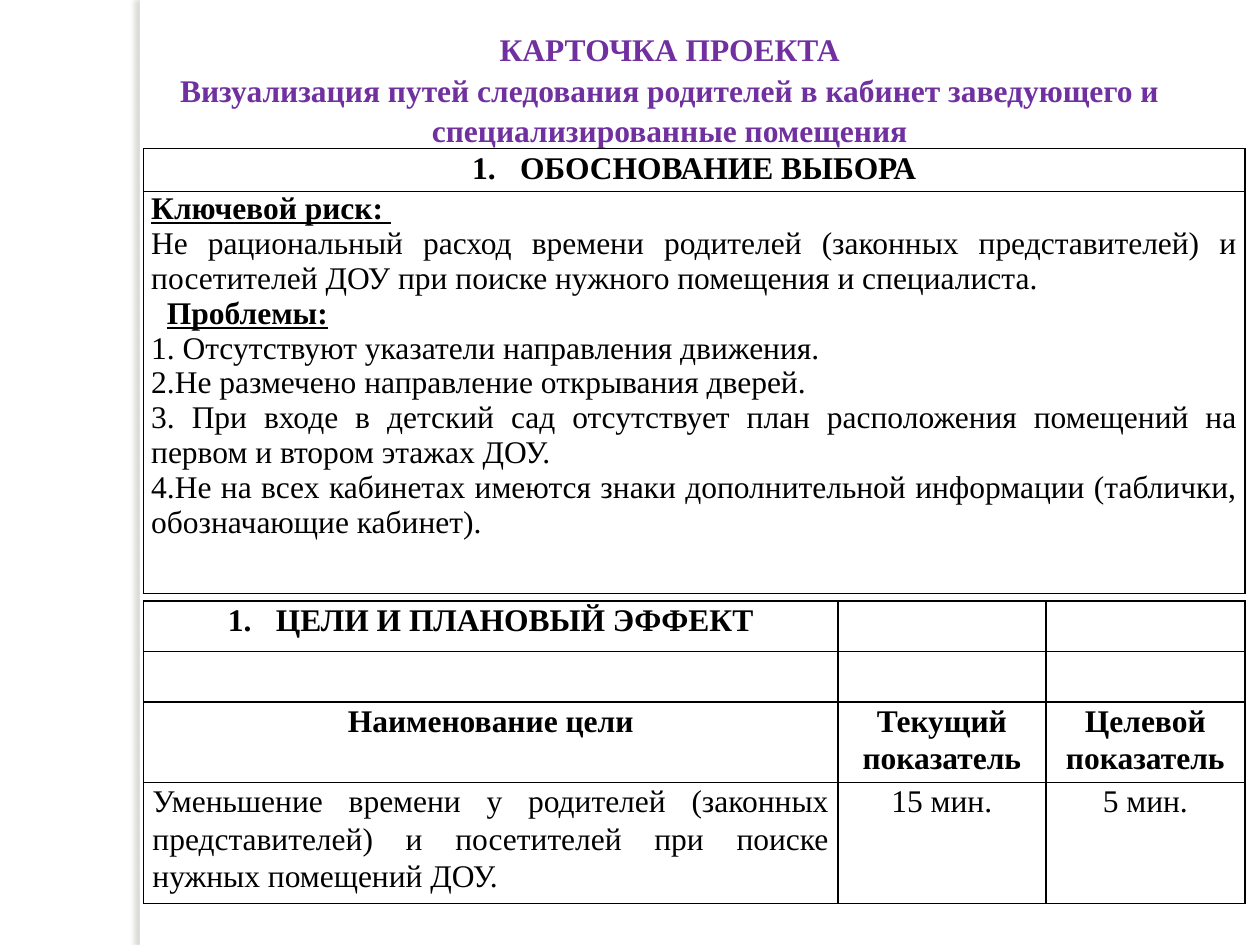
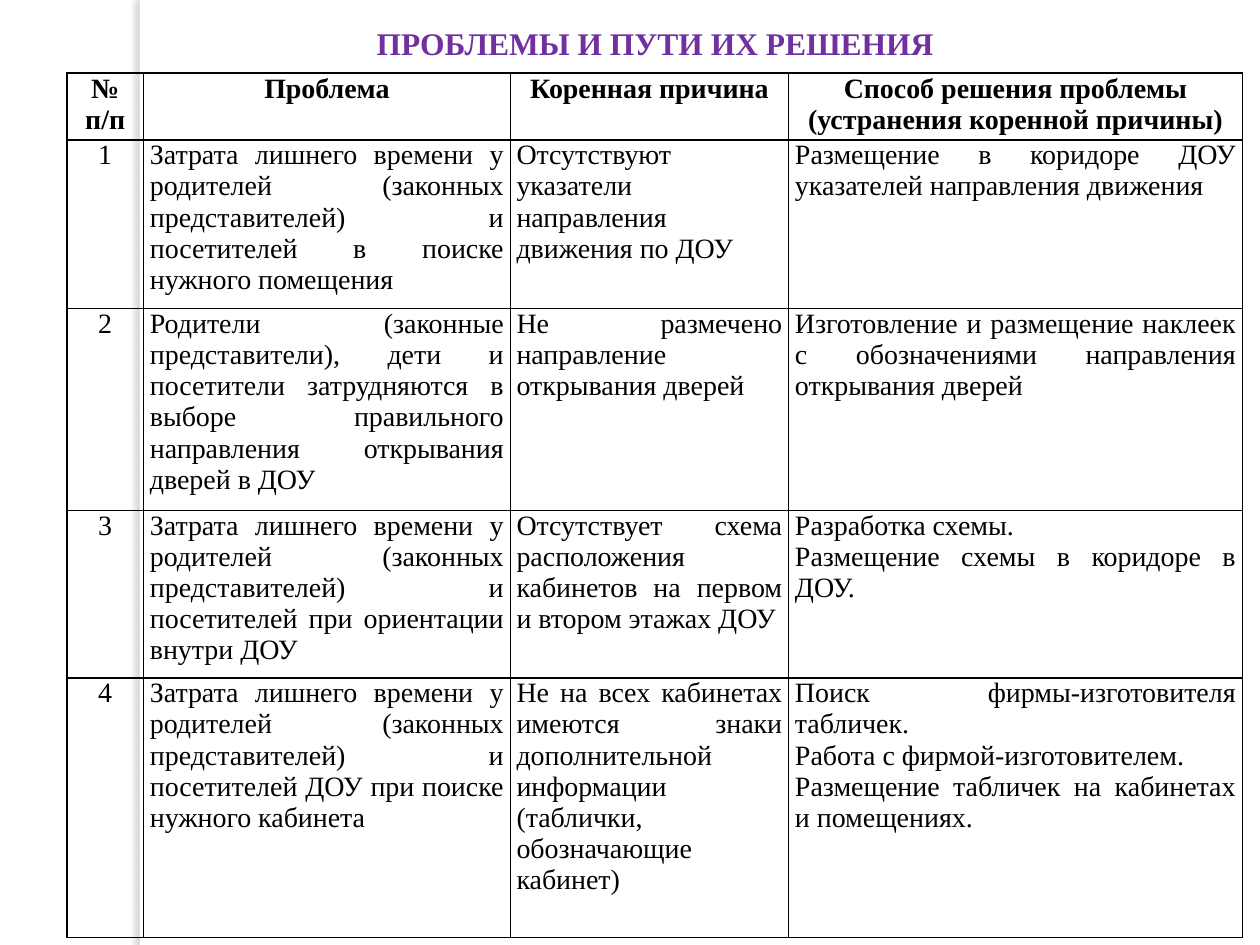
from dataclasses import dataclass
from itertools import accumulate

from lxml.etree import SubElement
from pptx import Presentation
from pptx.dml.color import RGBColor
from pptx.enum.shapes import MSO_SHAPE
from pptx.enum.text import MSO_ANCHOR, MSO_AUTO_SIZE, PP_ALIGN
from pptx.oxml import parse_xml
from pptx.oxml.ns import nsdecls, qn
from pptx.util import Inches, Pt

SLIDE_WIDTH, SLIDE_HEIGHT = Inches(10), Inches(7.5)
GRID_UNIT = SLIDE_WIDTH // 100  # the slide is 100 columns by 75 rows
FONT = "Times New Roman"
BLACK, WHITE, PURPLE, SHADOW = "000000", "FFFFFF", "7030A0", "736F63"
CENTER, JUSTIFY = PP_ALIGN.CENTER, PP_ALIGN.JUSTIFY
LOOSE = 1.07


@dataclass(frozen=True)
class Box:
    column: float
    row: float
    columns: float
    rows: float


@dataclass(frozen=True)
class Line:
    """One paragraph with its format."""
    text: str
    alignment: PP_ALIGN = JUSTIFY
    bold: bool = False
    underline: bool = False
    numbered: bool = False
    spacing: float = 1.0
    indent: float = 0


@dataclass(frozen=True)
class Grid:
    """A table: its corner, column widths, row heights and cells of lines."""
    column: float
    row: float
    widths: list[float]
    heights: list[float]
    cells: list[list[list[Line]]]
    size: int
    inset: float


def units(count: float) -> int:
    return round(count * GRID_UNIT)


def color(value: str) -> RGBColor:
    return RGBColor.from_string(value)


def place(box: Box) -> tuple[int, int, int, int]:
    return units(box.column), units(box.row), units(box.columns), units(box.rows)


def set_attributes(target, values: dict) -> None:
    for name, value in values.items():
        setattr(target, name, value)


def write_lines(frame, lines: list[Line], size: int, text_color: str) -> None:
    for index, line in enumerate(lines):
        paragraph = frame.add_paragraph() if index else frame.paragraphs[0]
        set_attributes(paragraph, {"alignment": line.alignment, "line_spacing": line.spacing})
        run = paragraph.add_run()
        run.text = line.text
        set_attributes(run.font, {"name": FONT, "size": Pt(size), "bold": line.bold,
                                  "underline": line.underline})
        run.font.color.rgb = color(text_color)
        properties = paragraph._p.get_or_add_pPr()
        if line.numbered:
            properties.set("marL", str(units(3.8)))
            properties.set("indent", str(-units(3.8)))
            SubElement(properties, qn("a:buFont"), typeface=FONT)
            SubElement(properties, qn("a:buAutoNum"), type="arabicPeriod")
        elif line.indent:
            properties.set("marL", str(units(line.indent)))


def add_side_band(slide) -> None:
    left, top, width, height = place(Box(11.1, 0, 0.8, 75))
    band = slide.shapes.add_shape(MSO_SHAPE.RECTANGLE, left, top, width, height)
    band.fill.solid()
    band.fill.fore_color.rgb = color(WHITE)
    band.line.fill.background()
    band._element.spPr.append(parse_xml(
        f'<a:effectLst {nsdecls("a")}>'
        f'<a:outerShdw blurRad="{Pt(3)}" dist="{Pt(3)}" dir="{180 * 60000}" algn="tl" rotWithShape="0">'
        f'<a:srgbClr val="{SHADOW}"><a:alpha val="25000"/></a:srgbClr>'
        '</a:outerShdw></a:effectLst>'))


def write_title(slide, box: Box, lines: list[str], top_inset: float) -> None:
    title = slide.shapes.title
    left, top, width, height = place(box)
    set_attributes(title, {"left": left, "top": top, "width": width, "height": height})
    set_attributes(title.text_frame, {
        "word_wrap": True, "auto_size": MSO_AUTO_SIZE.NONE,
        "vertical_anchor": MSO_ANCHOR.TOP, "margin_top": units(top_inset)})
    write_lines(title.text_frame,
                [Line(text, CENTER, bold=True, spacing=LOOSE) for text in lines], 18, PURPLE)


def add_borders(cell) -> None:
    properties = cell._tc.get_or_add_tcPr()
    for index, side in enumerate(("lnL", "lnR", "lnT", "lnB")):
        properties.insert(index, parse_xml(
            f'<a:{side} {nsdecls("a")} w="{Pt(1)}"><a:solidFill>'
            f'<a:srgbClr val="{BLACK}"/></a:solidFill></a:{side}>'))


def add_grid(slide, grid: Grid) -> None:
    box = Box(grid.column, grid.row, sum(grid.widths), sum(grid.heights))
    table = slide.shapes.add_table(len(grid.heights), len(grid.widths), *place(box)).table
    set_attributes(table, {"first_row": False, "horz_banding": False})
    for tracks, lengths, name in ((table.columns, grid.widths, "width"),
                                  (table.rows, grid.heights, "height")):
        edges = [units(edge) for edge in accumulate(lengths, initial=0)]
        for track, start, end in zip(tracks, edges, edges[1:]):
            setattr(track, name, end - start)
    for row, contents in zip(table.rows, grid.cells):
        for cell, lines in zip(row.cells, contents):
            set_attributes(cell, {"margin_left": units(grid.inset), "margin_right": units(grid.inset),
                                  "margin_top": 0, "margin_bottom": 0})
            cell.fill.background()
            add_borders(cell)
            write_lines(cell.text_frame, lines, grid.size, BLACK)


def heading(text: str, spacing: float = 1.0, numbered: bool = False) -> list[Line]:
    return [Line(text, CENTER, bold=True, spacing=spacing, numbered=numbered)]


def solution_row(number: int, problem: str, cause: str, *solutions: str) -> list[list[Line]]:
    return [[Line(str(number), CENTER)], [Line(problem)], [Line(cause)],
            [Line(solution) for solution in solutions]]


RATIONALE = Grid(11.4, 11.8, [87.4], [3.4, 31.9], [
    [heading("ОБОСНОВАНИЕ ВЫБОРА", LOOSE, numbered=True)],
    [[Line("Ключевой риск: ", bold=True, underline=True),
      Line("Не рациональный расход времени родителей (законных представителей) и посетителей ДОУ "
           "при поиске нужного помещения и специалиста."),
      Line("Проблемы:", bold=True, underline=True, indent=1.25),
      Line("1. Отсутствуют указатели направления движения."),
      Line("2.Не размечено направление открывания дверей."),
      Line("3. При входе в детский сад отсутствует план расположения помещений на первом и втором "
           "этажах ДОУ."),
      Line("4.Не на всех кабинетах имеются знаки дополнительной информации "
           "(таблички, обозначающие кабинет).")]],
], size=18, inset=0.6)

GOALS = Grid(11.4, 47.7, [55.1, 16.5, 15.8], [4, 4, 6.4, 9.6], [
    [heading("ЦЕЛИ И ПЛАНОВЫЙ ЭФФЕКТ", LOOSE, numbered=True), [], []],
    [[], [], []],
    [heading(text, LOOSE) for text in ("Наименование цели", "Текущий показатель", "Целевой показатель")],
    [[Line("Уменьшение времени у родителей (законных представителей) и посетителей при поиске "
           "нужных помещений ДОУ.", spacing=LOOSE)],
     [Line("15 мин.", CENTER, spacing=LOOSE)],
     [Line("5 мин.", CENTER, spacing=LOOSE)]],
], size=18, inset=0.7)

LOST_TIME = "Затрата лишнего времени у родителей (законных представителей) и посетителей "

SOLUTIONS = Grid(5.3, 5.8, [6.1, 29.1, 22.1, 36], [5.3, 13.4, 16, 13.3, 20.6], [
    [heading(text) for text in ("№ п/п", "Проблема", "Коренная причина",
                                "Способ решения проблемы (устранения коренной причины)")],
    solution_row(1, LOST_TIME + "в поиске нужного помещения",
                 "Отсутствуют указатели направления движения по ДОУ",
                 "Размещение в коридоре ДОУ указателей направления движения"),
    solution_row(2, "Родители (законные представители), дети и посетители затрудняются в выборе "
                    "правильного направления открывания дверей в ДОУ",
                 "Не размечено направление открывания дверей",
                 "Изготовление и размещение наклеек с обозначениями направления открывания дверей"),
    solution_row(3, LOST_TIME + "при ориентации внутри ДОУ",
                 "Отсутствует схема расположения кабинетов на первом и втором этажах ДОУ",
                 "Разработка схемы.", "Размещение схемы в коридоре в ДОУ."),
    solution_row(4, LOST_TIME + "ДОУ при поиске нужного кабинета",
                 "Не на всех кабинетах имеются знаки дополнительной информации "
                 "(таблички, обозначающие кабинет)",
                 "Поиск фирмы-изготовителя табличек.", "Работа с фирмой-изготовителем.",
                 "Размещение табличек на кабинетах и помещениях."),
], size=16, inset=0.5)


def add_page(presentation, title_box: Box, title: list[str], top_inset: float,
             grids: list[Grid]) -> None:
    slide = presentation.slides.add_slide(presentation.slide_layouts[5])
    add_side_band(slide)
    write_title(slide, title_box, title, top_inset)
    for grid in grids:
        add_grid(slide, grid)


def main() -> None:
    presentation = Presentation()
    set_attributes(presentation, {"slide_width": SLIDE_WIDTH, "slide_height": SLIDE_HEIGHT})
    add_page(presentation, Box(11.4, 1.7, 83.5, 10.1),
             ["КАРТОЧКА ПРОЕКТА",
              "Визуализация путей следования родителей в кабинет заведующего и "
              "специализированные помещения"], 0.5, [RATIONALE, GOALS])
    add_page(presentation, Box(20.1, 1, 63.8, 7.1), ["ПРОБЛЕМЫ И ПУТИ ИХ РЕШЕНИЯ"], 0.7, [SOLUTIONS])
    presentation.save("out.pptx")


if __name__ == "__main__":
    main()
